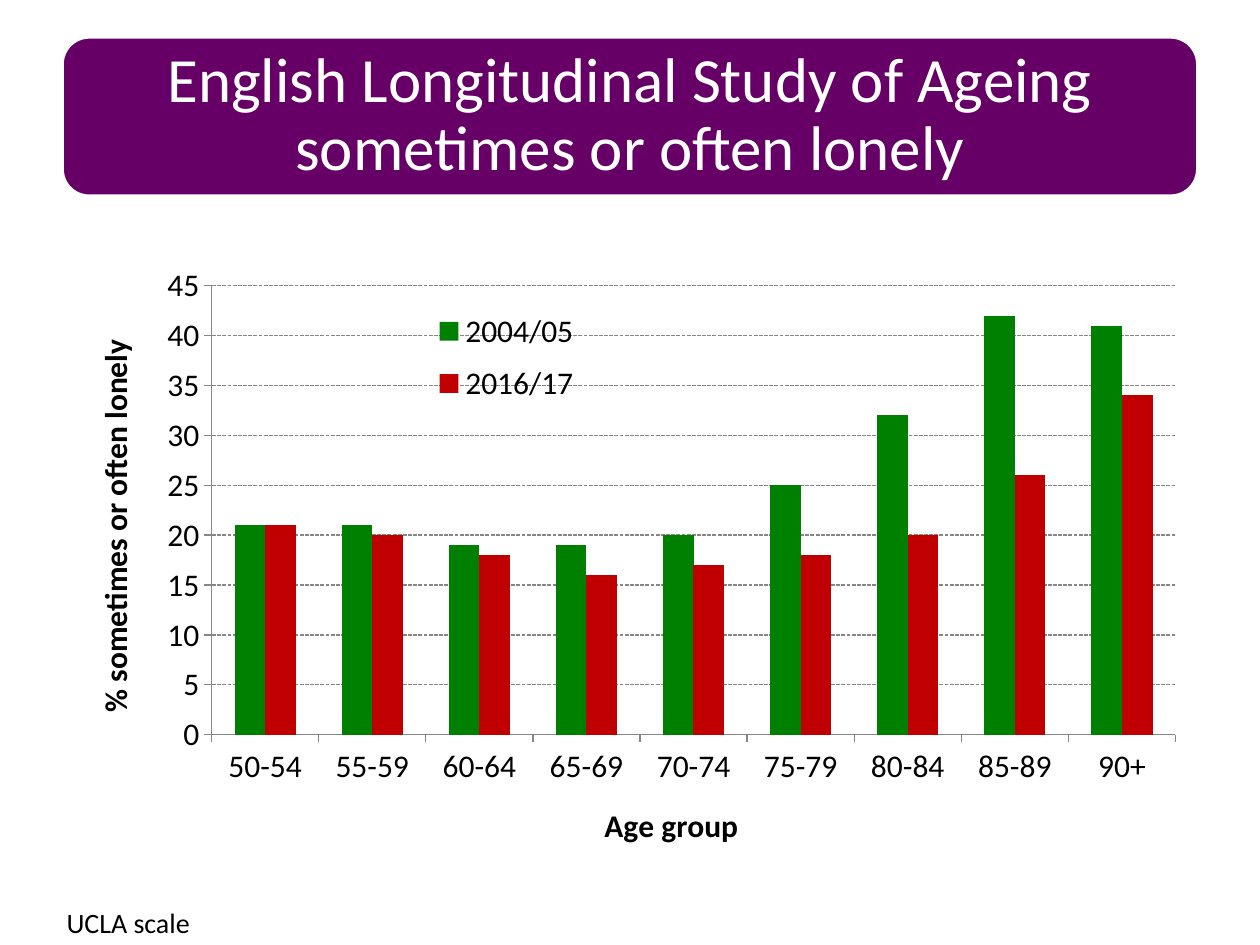
"""Build a slide charting loneliness by age group in two survey waves."""
from lxml.etree import SubElement
from pptx import Presentation
from pptx.chart.data import CategoryChartData
from pptx.dml.color import RGBColor
from pptx.enum.chart import XL_CHART_TYPE, XL_LEGEND_POSITION, XL_TICK_MARK
from pptx.enum.dml import MSO_LINE
from pptx.enum.shapes import MSO_SHAPE
from pptx.enum.text import MSO_ANCHOR, MSO_AUTO_SIZE, PP_ALIGN
from pptx.oxml.ns import qn
from pptx.util import Inches, Pt

COLORS = {"plum": "660066", "white": "FFFFFF", "black": "000000",
          "green": "008000", "red": "C00000", "grey": "868686"}


def style(font, size, color, bold=False):
    """Set the font from its format values."""
    values = {"name": "Calibri", "size": Pt(size), "bold": bold}
    for key, value in values.items():
        setattr(font, key, value)
    font.color.rgb = RGBColor.from_string(COLORS[color])


def place(parent, index, values):
    """Give a chart part a fixed place, as fractions of the chart."""
    for old in parent.findall(qn("c:layout")):
        parent.remove(old)
    layout = SubElement(parent, qn("c:layout"))
    parent.insert(index, layout)
    manual = SubElement(layout, qn("c:manualLayout"))
    for key, value in values.items():
        SubElement(manual, qn(f"c:{key}")).set("val", str(value))


deck = Presentation()
deck.slide_width, deck.slide_height = Inches(10), Inches(7.5)
slide = deck.slides.add_slide(deck.slide_layouts[6])

banner = slide.shapes.add_shape(
    MSO_SHAPE.ROUNDED_RECTANGLE, Inches(0.5), Inches(0.3), Inches(9), Inches(1.25))
banner.shadow.inherit = False
banner.fill.solid()
banner.fill.fore_color.rgb = RGBColor.from_string(COLORS["plum"])
banner.line.color.rgb = RGBColor.from_string(COLORS["white"])
banner.line.width = Pt(1)
frame = banner.text_frame
inset = Inches(0.2)
format = {"word_wrap": True, "vertical_anchor": MSO_ANCHOR.MIDDLE,
          "margin_left": inset, "margin_right": inset,
          "margin_top": inset, "margin_bottom": inset}
for key, value in format.items():
    setattr(frame, key, value)
title = frame.paragraphs[0]
title.alignment = PP_ALIGN.CENTER
title.line_spacing = 0.9
run = title.add_run()
run.text = "English Longitudinal Study of Ageing sometimes or often lonely"
style(run.font, 36, "white")

waves = {"2004/05": ("green", (21, 21, 19, 19, 20, 25, 32, 42, 41)),
         "2016/17": ("red", (21, 20, 18, 16, 17, 18, 20, 26, 34))}
data = CategoryChartData()
data.categories = [f"{age}-{age + 4}" for age in range(50, 90, 5)] + ["90+"]
for name, (color, rates) in waves.items():
    data.add_series(name, rates)
chart = slide.shapes.add_chart(
    XL_CHART_TYPE.COLUMN_CLUSTERED, Inches(0.51), Inches(2.02),
    Inches(9), Inches(4.95), data).chart
chart.has_title = False
style(chart.font, 18, "black")

plot = chart.plots[0]
format = {"gap_width": 150, "overlap": 0, "vary_by_categories": False}
for key, value in format.items():
    setattr(plot, key, value)
for series in plot.series:
    series.format.fill.solid()
    series.format.fill.fore_color.rgb = RGBColor.from_string(
        COLORS[waves[series.name][0]])

rates, ages = chart.value_axis, chart.category_axis
format = {"minimum_scale": 0, "maximum_scale": 45, "major_unit": 5,
          "has_major_gridlines": True}
for key, value in format.items():
    setattr(rates, key, value)
grid = rates.major_gridlines.format.line
grid.dash_style = MSO_LINE.SQUARE_DOT
lines = [grid]
for axis, label in ((ages, "Age group"), (rates, "% sometimes or often lonely")):
    axis.major_tick_mark = XL_TICK_MARK.OUTSIDE
    lines.append(axis.format.line)
    text = axis.axis_title.text_frame
    text.text = label
    style(text.paragraphs[0].runs[0].font, 18, "black", True)
for line in lines:
    line.color.rgb = RGBColor.from_string(COLORS["grey"])
    line.width = Pt(0.75)

chart.has_legend = True
legend = chart.legend
legend.position = XL_LEGEND_POSITION.RIGHT
legend.include_in_layout = True
style(legend.font, 18, "black")
place(legend._element, 1, {"xMode": "edge", "yMode": "edge",
                           "x": 0.31, "y": 0.07, "w": 0.16, "h": 0.19})
place(chart._chartSpace.chart.plotArea, 0, {
    "layoutTarget": "inner", "xMode": "edge", "yMode": "edge",
    "x": 0.13, "y": 0.05, "w": 0.85, "h": 0.72})

note = slide.shapes.add_textbox(
    Inches(0.43), Inches(7.14), Inches(1.19), Inches(0.37)).text_frame
format = {"word_wrap": False, "auto_size": MSO_AUTO_SIZE.SHAPE_TO_FIT_TEXT}
for key, value in format.items():
    setattr(note, key, value)
run = note.paragraphs[0].add_run()
run.text = "UCLA scale"
style(run.font, 16, "black")

deck.save("out.pptx")
